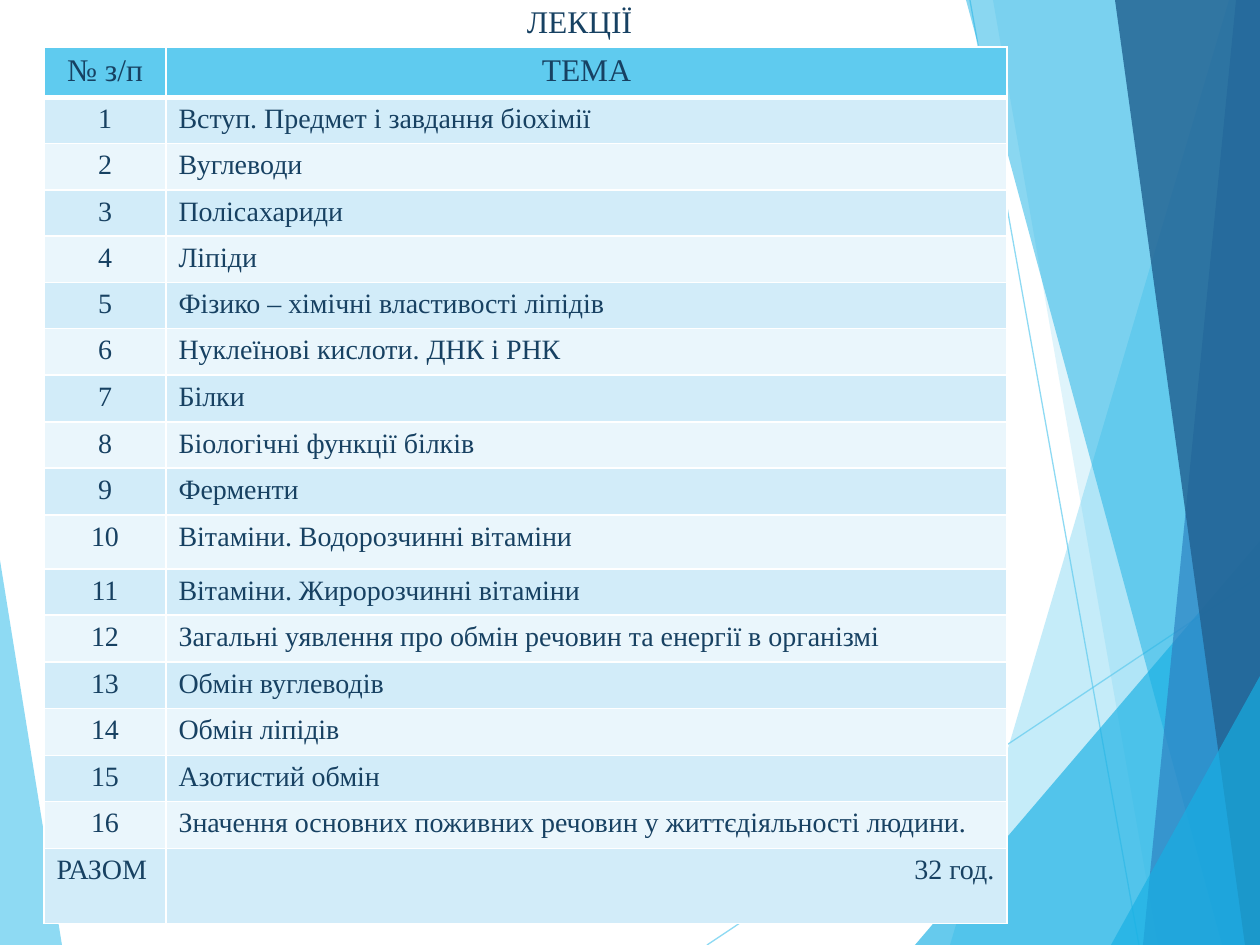
from dataclasses import dataclass
from lxml.etree import SubElement
from pptx import Presentation
from pptx.dml.color import RGBColor
from pptx.enum.shapes import MSO_CONNECTOR as Connector
from pptx.enum.text import MSO_ANCHOR as Anchor, MSO_AUTO_SIZE as AutoSize, PP_ALIGN as Align
from pptx.oxml.ns import qn
from pptx.slide import Slide
from pptx.util import Emu, Pt

EMU_PER_PX = 914400 / 126
SKY, CYAN, BLUE, NAVY = "5FCBEF", "17B0E4", "2E83C3", "226292"

FACETS = [
    (SKY, 70, [(0, 560), (62, 945), (0, 945)]),
    (SKY, 36, [(1229, 0), (950, 945), (1260, 945), (1260, 0)]),
    (SKY, 20, [(993, 0), (1158, 945), (1260, 945), (1260, 0)]),
    (CYAN, 66, [(915, 945), (1260, 541), (1260, 945)]),
    (CYAN, 50, [(966, 0), (1222, 945), (1260, 945), (1260, 0)]),
    (BLUE, 70, [(1236, 0), (1143, 945), (1260, 945), (1260, 0)]),
    (NAVY, 82, [(1115, 0), (1245, 945), (1260, 945), (1260, 0)]),
    (CYAN, 66, [(1111, 945), (1260, 676), (1260, 945)]),
]
RAYS = [((707, 945), (1260, 576)), ((970, 0), (1139, 945))]
TOPICS = [
    "Вступ. Предмет і завдання біохімії",
    "Вуглеводи",
    "Полісахариди",
    "Ліпіди",
    "Фізико – хімічні властивості ліпідів",
    "Нуклеїнові кислоти. ДНК і РНК",
    "Білки",
    "Біологічні функції білків",
    "Ферменти",
    "Вітаміни. Водорозчинні вітаміни",
    "Вітаміни. Жиророзчинні вітаміни",
    "Загальні уявлення про обмін речовин та енергії в організмі",
    "Обмін вуглеводів",
    "Обмін ліпідів",
    "Азотистий обмін",
    "Значення основних поживних речовин у життєдіяльності людини.",
]
ROW_HEIGHTS = [49, 46, 45, 45, 45, 46, 46, 47, 46, 47, 54, 46, 47, 46, 47, 46, 47, 75]
COLUMN_WIDTHS = [122, 841]


def px(length):
    return Emu(round(length * EMU_PER_PX))


def color(value):
    return RGBColor.from_string(value)


def apply(target, values):
    for name, value in values.items():
        setattr(target, name, value)


def set_opacity(shape, percent):
    for element in shape.element.spPr.iter(qn("a:srgbClr")):
        SubElement(element, qn("a:alpha"), val=str(percent * 1000))


@dataclass
class LectureSlide:
    slide: Slide
    font: str = "Times New Roman"
    ink: str = "174162"
    header_fill: str = SKY
    bands: tuple = ("EAF6FC", "D2ECF9")
    rule: str = "FFFFFF"

    def label(self, frame, text, size, align):
        paragraph = frame.paragraphs[0]
        paragraph.text = text
        paragraph.alignment = align
        apply(paragraph.font, {"name": self.font, "size": Pt(size), "bold": False})
        paragraph.font.color.rgb = color(self.ink)

    def title(self, text, left, top, width, height):
        shape = self.slide.shapes.title
        apply(shape, {"left": px(left), "top": px(top), "width": px(width), "height": px(height)})
        apply(shape.text_frame, {"word_wrap": True, "vertical_anchor": Anchor.TOP,
                                 "auto_size": AutoSize.SHAPE_TO_FIT_TEXT})
        self.label(shape.text_frame, text, 18, Align.CENTER)

    def facet(self, fill, opacity, points):
        builder = self.slide.shapes.build_freeform(*points[0], scale=EMU_PER_PX)
        builder.add_line_segments(points[1:], close=True)
        shape = builder.convert_to_shape()
        shape.shadow.inherit = False
        shape.fill.solid()
        shape.fill.fore_color.rgb = color(fill)
        shape.line.fill.background()
        set_opacity(shape, opacity)

    def ray(self, start, end):
        ends = [px(value) for value in (*start, *end)]
        connector = self.slide.shapes.add_connector(Connector.STRAIGHT, *ends)
        connector.line.color.rgb = color(SKY)
        connector.line.width = Pt(0.75)
        set_opacity(connector, 70)
        SubElement(connector.element.spPr, qn("a:effectLst"))

    def borders(self, cell, row):
        properties = cell._tc.get_or_add_tcPr()
        thick_side = {0: "B", 1: "T"}.get(row)
        for side in "LRTB":
            width = Pt(3 if side == thick_side else 1)
            line = SubElement(properties, qn(f"a:ln{side}"), w=str(int(width)))
            fill = SubElement(line, qn("a:solidFill"))
            SubElement(fill, qn("a:srgbClr"), val=self.rule)

    def table(self, rows, left, top, widths, heights):
        frame = self.slide.shapes.add_table(len(rows), len(widths), px(left), px(top),
                                            px(sum(widths)), px(sum(heights)))
        table = frame.table
        apply(table, {"first_row": False, "horz_banding": False})
        for column, width in zip(table.columns, widths):
            column.width = px(width)
        for index, (row, height, values) in enumerate(zip(table.rows, heights, rows)):
            row.height = px(height)
            fill = self.bands[index % 2] if index else self.header_fill
            for cell, (text, align) in zip(row.cells, values):
                self.borders(cell, index)
                cell.fill.solid()
                cell.fill.fore_color.rgb = color(fill)
                self.label(cell.text_frame, text, 16 if index else 18, align)


def main():
    presentation = Presentation()
    apply(presentation, {"slide_width": px(1260), "slide_height": px(945)})
    lectures = LectureSlide(presentation.slides.add_slide(presentation.slide_layouts[5]))

    lectures.facet(*FACETS[0])
    for ray in RAYS:
        lectures.ray(*ray)
    for facet in FACETS[1:]:
        lectures.facet(*facet)

    header = [("№ з/п", Align.CENTER), ("ТЕМА", Align.CENTER)]
    topics = [[(str(number), Align.CENTER), (topic, Align.LEFT)]
              for number, topic in enumerate(TOPICS, 1)]
    total = [("РАЗОМ", Align.LEFT), ("32 год.", Align.RIGHT)]
    lectures.table([header, *topics, total], 44, 47, COLUMN_WIDTHS, ROW_HEIGHTS)
    lectures.title("ЛЕКЦІЇ", 263, -4, 633, 50)

    presentation.save("out.pptx")


if __name__ == "__main__":
    main()
